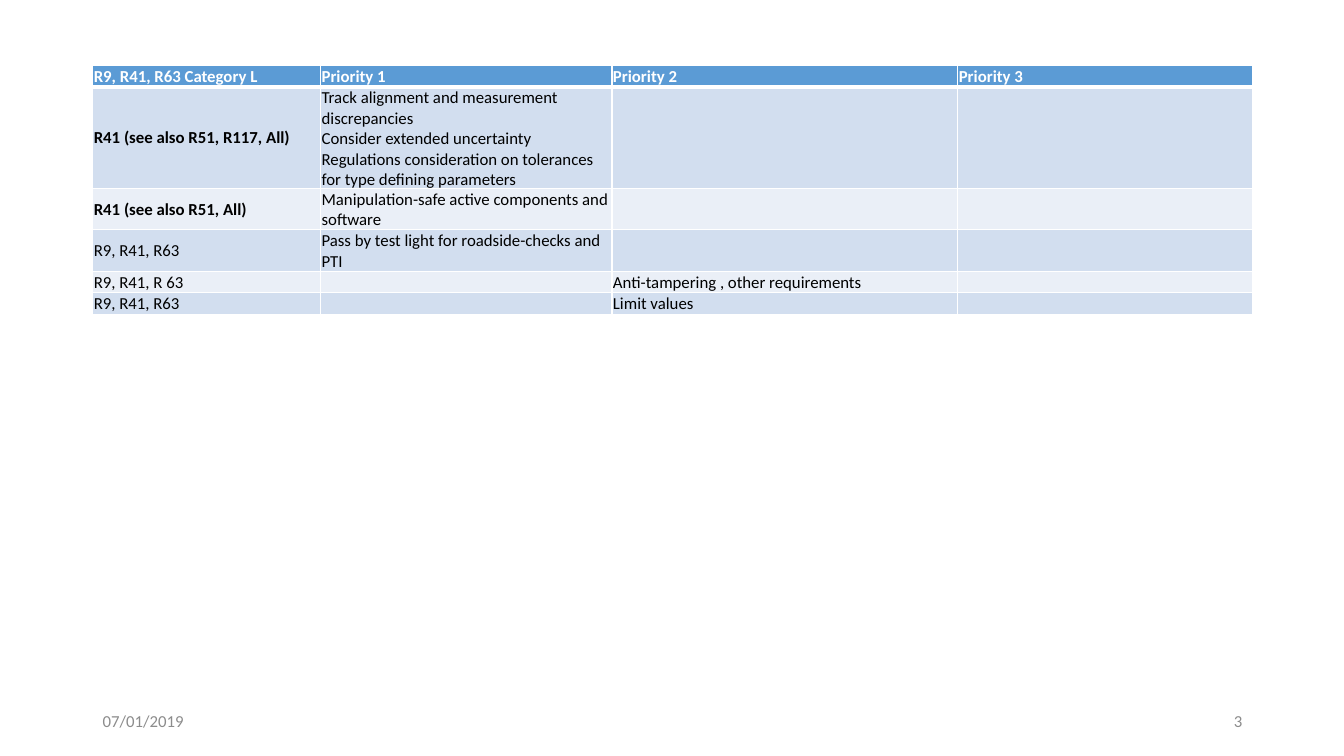
import pptx
import pptx.dml.color
import pptx.enum.text
import pptx.oxml.ns
import pptx.util
from lxml import etree

Inches = pptx.util.Inches
Pt = pptx.util.Pt
qn = pptx.oxml.ns.qn
ALIGN = pptx.enum.text.PP_ALIGN
MIDDLE = pptx.enum.text.MSO_ANCHOR.MIDDLE

COLORS = {
    "header": "5B9BD5",
    "odd": "D2DEEF",
    "even": "EAEFF7",
    "white": "FFFFFF",
    "text": "000000",
    "footer": "8C8C8C",
}
BASE_FONT = {"name": "Calibri", "size": Pt(12)}
CELL_FORMAT = {
    "margin_left": Inches(0.01),
    "margin_top": Inches(0.01),
    "margin_right": Inches(0.01),
    "margin_bottom": 0,
    "vertical_anchor": MIDDLE,
}
COLUMN_WIDTHS = [2.26, 2.89, 3.43, 2.92]
ROW_HEIGHTS = [0.21, 1.01, 0.41, 0.41, 0.21, 0.22]
BOLD_FIRST_CELLS = 3
ROWS = [
    ["R9, R41, R63 Category L", "Priority 1", "Priority 2", "Priority 3"],
    [
        "R41 (see also R51, R117, All)",
        "Track alignment and measurement discrepancies \n"
        "Consider extended uncertainty\n"
        "Regulations consideration on tolerances for type defining parameters",
        "",
        "",
    ],
    ["R41 (see also R51, All)", "Manipulation-safe active components and software", "", ""],
    ["R9, R41, R63", "Pass by test light for roadside-checks and PTI", "", ""],
    ["R9, R41, R 63", "", "Anti-tampering , other requirements", ""],
    ["R9, R41, R63", "", "Limit values", ""],
]


def apply_format(target, values):
    for name, value in values.items():
        setattr(target, name, value)


def rgb(color):
    return pptx.dml.color.RGBColor.from_string(COLORS[color])


def write_text(paragraph, text, color, bold=False):
    for index, line in enumerate(text.split("\n") if text else []):
        if index:
            paragraph.add_line_break()
        run = paragraph.add_run()
        run.text = line
        apply_format(run.font, {**BASE_FONT, "bold": bold})
        run.font.color.rgb = rgb(color)
    for line_break in paragraph._p.findall(qn("a:br")):
        etree.SubElement(line_break, qn("a:rPr"), sz="1200")
    etree.SubElement(paragraph._p, qn("a:endParaRPr"), sz="1200")


def set_borders(cell, widths):
    properties = cell._tc.get_or_add_tcPr()
    for side, width in widths.items():
        line = etree.SubElement(properties, qn(f"a:ln{side}"), w=str(Pt(width)))
        fill = etree.SubElement(line, qn("a:solidFill"))
        etree.SubElement(fill, qn("a:srgbClr"), val=COLORS["white"])


def format_cell(cell, text, row, column):
    header = row == 0
    apply_format(cell, CELL_FORMAT)
    set_borders(cell, {"L": 1, "R": 1, "T": 3 if row == 1 else 1, "B": 3 if header else 1})
    cell.fill.solid()
    cell.fill.fore_color.rgb = rgb("header" if header else "odd" if row % 2 else "even")
    bold = header or (column == 0 and row < BOLD_FIRST_CELLS)
    write_text(cell.text_frame.paragraphs[0], text, "white" if header else "text", bold)


def add_priority_table(slide):
    frame = slide.shapes.add_table(
        len(ROWS), len(COLUMN_WIDTHS), Inches(0.92), Inches(0.65), Inches(11.5), Inches(2.46)
    )
    table = frame.table
    for column, width in zip(table.columns, COLUMN_WIDTHS):
        column.width = Inches(width)
    for row, height in zip(table.rows, ROW_HEIGHTS):
        row.height = Inches(height)
    for row, texts in enumerate(ROWS):
        for column, text in enumerate(texts):
            format_cell(table.cell(row, column), text, row, column)


def add_footer(slide, text, left, alignment):
    shape = slide.shapes.add_textbox(Inches(left), Inches(6.95), Inches(3), Inches(0.4))
    apply_format(shape.text_frame, {"word_wrap": True, "vertical_anchor": MIDDLE})
    paragraph = shape.text_frame.paragraphs[0]
    paragraph.alignment = alignment
    write_text(paragraph, text, "footer")


def main():
    presentation = pptx.Presentation()
    apply_format(
        presentation, {"slide_width": Inches(13.33), "slide_height": Inches(7.5)}
    )
    slide = presentation.slides.add_slide(presentation.slide_layouts[6])
    add_footer(slide, "07/01/2019", 0.92, ALIGN.LEFT)
    add_footer(slide, "3", 9.42, ALIGN.RIGHT)
    add_priority_table(slide)
    presentation.save("out.pptx")


if __name__ == "__main__":
    main()
